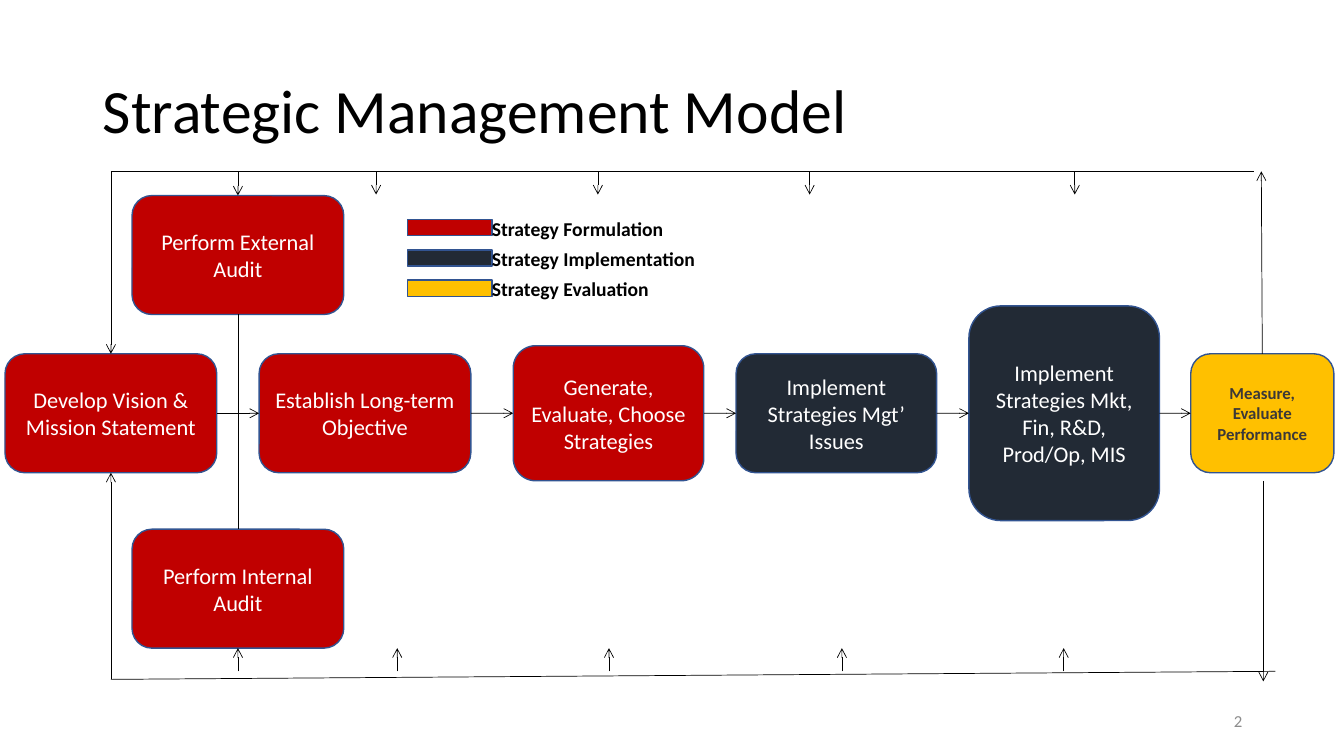
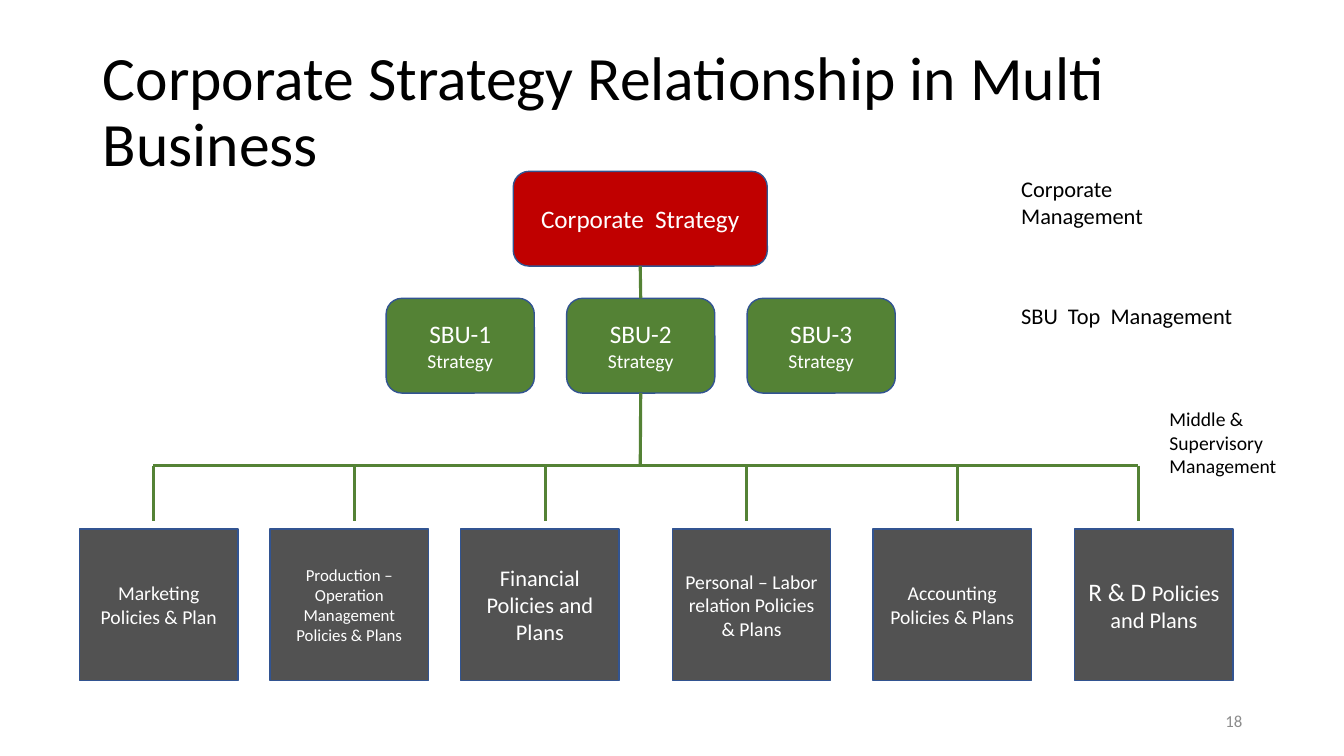
from lxml.etree import SubElement
from pptx import Presentation
from pptx.dml.color import RGBColor
from pptx.enum.shapes import MSO_CONNECTOR as CONN, MSO_SHAPE as SHAPE
from pptx.enum.text import MSO_ANCHOR as ANCHOR, MSO_AUTO_SIZE as FIT, PP_ALIGN as ALIGN
from pptx.oxml.ns import qn
from pptx.util import Inches, Pt

FONT = "Calibri"
BLACK, WHITE, GRAY = "000000", "FFFFFF", "8C8C8C"
RED, NAVY, GOLD, GREEN, SLATE = "C00000", "222A35", "FFC000", "548235", "525252"
OUTLINE, BROWN = "325491", "3B3838"
TOP, LEFT, BOTTOM, RIGHT = range(4)


def rgb(color):
    """Turn a hex string into a colour."""
    return RGBColor.from_string(color)


def write(shape, text, size=16, color=BLACK, bold=False, align=ALIGN.LEFT,
          anchor=ANCHOR.MIDDLE, wrap=True, fit=FIT.NONE, spacing=None):
    """Fill a shape with one paragraph, from a string or (text, size) runs."""
    tf = shape.text_frame
    tf.word_wrap, tf.auto_size, tf.vertical_anchor = wrap, fit, anchor
    p = tf.paragraphs[0]
    p.alignment = align
    if spacing:
        p.line_spacing = spacing
    for part, part_size in [(text, size)] if isinstance(text, str) else text:
        r = p.add_run()
        r.text = part
        r.font.name, r.font.size, r.font.bold = FONT, Pt(part_size), bold
        r.font.color.rgb = rgb(color)


def label(s, text, x, y, w, h, **fmt):
    """Place a text box."""
    write(s.shapes.add_textbox(Inches(x), Inches(y), Inches(w), Inches(h)), text, **fmt)


def box(s, kind, x, y, w, h, fill, text=None, color=WHITE, **fmt):
    """Place a filled, outlined shape with optional centred text."""
    sp = s.shapes.add_shape(kind, Inches(x), Inches(y), Inches(w), Inches(h))
    sp.shadow.inherit = False
    sp.fill.solid()
    sp.fill.fore_color.rgb = rgb(fill)
    sp.line.color.rgb = rgb(OUTLINE)
    sp.line.width = Pt(1)
    if text:
        write(sp, text, color=color, align=ALIGN.CENTER, **fmt)
    return sp


def line(s, start, end, color=BLACK, width=0.5, arrow=False):
    """Draw a straight line between ends given as (x, y) or (shape, side)."""
    joined = [not isinstance(tip[0], (int, float)) for tip in (start, end)]
    points = [(0, 0) if j else (Inches(tip[0]), Inches(tip[1]))
              for tip, j in zip((start, end), joined)]
    c = s.shapes.add_connector(CONN.STRAIGHT, *points[0], *points[1])
    if joined[0]:
        c.begin_connect(*start)
    if joined[1]:
        c.end_connect(*end)
    c.line.color.rgb = rgb(color)
    c.line.width = Pt(width)
    sp_pr = c._element.spPr
    if arrow:
        SubElement(sp_pr.find(qn("a:ln")), qn("a:tailEnd"), type="arrow")
    SubElement(sp_pr, qn("a:effectLst"))


def add_slide(prs, title, number):
    """Add a slide with the shared title style and page number."""
    s = prs.slides.add_slide(prs.slide_layouts[5])
    sp = s.shapes.title
    sp.left, sp.top, sp.width, sp.height = map(Inches, (0.92, 0.4, 11.5, 1.45))
    write(sp, title, size=44, spacing=0.9)
    label(s, number, 9.42, 6.95, 3, 0.4, size=12, color=GRAY, align=ALIGN.RIGHT)
    return s


def process(s, x, mid):
    """Draw the process boxes along a centre line, with the two audits."""
    steps = [
        ("Develop Vision & Mission Statement", 0, 2.1, 1.18, RED),
        ("Establish Long-term Objective", 2.52, 2.1, 1.18, RED),
        ("Generate, Evaluate, Choose Strategies", 5.04, 1.89, 1.34, RED),
        ("Implement Strategies Mgt’ Issues", 7.25, 1.99, 1.18, NAVY),
        ("Implement Strategies Mkt, Fin, R&D, Prod/Op, MIS", 9.56, 1.89, 2.13, NAVY),
    ]
    boxes = [box(s, SHAPE.ROUNDED_RECTANGLE, x + dx, mid - h / 2, w, h, fill, text)
             for text, dx, w, h, fill in steps]
    boxes.append(box(s, SHAPE.ROUNDED_RECTANGLE, x + 11.76, mid - 0.59, 1.42, 1.18, GOLD,
                     "Measure, Evaluate Performance", color=BROWN, size=12, bold=True))
    external, internal = [
        box(s, SHAPE.ROUNDED_RECTANGLE, x + 1.26, mid + dy, 2.1, 1.18, RED, text)
        for text, dy in (("Perform External Audit", -2.16), ("Perform Internal Audit", 1.15))]
    line(s, (external, BOTTOM), (internal, TOP))
    for before, after in zip(boxes, boxes[1:]):
        line(s, (before, RIGHT), (after, LEFT), arrow=True)
    return boxes[0], boxes[-1], external, internal


def feedback(s, x, y, w, h, vision, measure, external, internal):
    """Draw the feedback loop around the process."""
    right, bottom, tick = x + w, y + h, 0.23
    inner = bottom - 0.08
    line(s, (x, y), (right - 0.09, y))
    line(s, (x, bottom), (right + 0.12, inner))
    line(s, (x, y), (vision, TOP), arrow=True)
    line(s, (x, bottom), (vision, BOTTOM), arrow=True)
    line(s, (measure, TOP), (right - 0.02, y), arrow=True)
    line(s, (right, y + 3.07), (right, bottom + 0.02), arrow=True)
    line(s, (x + 1.26, y), (external, TOP), arrow=True)
    line(s, (x + 1.26, inner), (internal, BOTTOM), arrow=True)
    for dx in (2.63, 4.83, 6.93, 9.56):
        line(s, (x + dx, y), (x + dx, y + tick), arrow=True)
    for dx in (2.84, 4.94, 7.25, 9.45):
        line(s, (x + dx, inner), (x + dx, inner - tick), arrow=True)


def legend(s, x, y):
    """Draw the colour key of the strategy stages."""
    for i, (stage, fill) in enumerate((("Formulation", RED), ("Implementation", NAVY),
                                       ("Evaluation", GOLD))):
        top = y + 0.3 * i
        box(s, SHAPE.RECTANGLE, x, top, 0.84, 0.16, fill)
        label(s, f"Strategy {stage}", x + 0.74, top - 0.08, 2.23, 0.34, size=14, bold=True,
              anchor=ANCHOR.TOP, wrap=False, fit=FIT.SHAPE_TO_FIT_TEXT)


def upper_levels(s, x, y, bus_y):
    """Draw the corporate box and the business units, down to the bus line."""
    corporate = box(s, SHAPE.ROUNDED_RECTANGLE, x + 1.26, y, 2.52, 0.94, RED,
                    "Corporate  Strategy", size=18)
    units = [box(s, SHAPE.ROUNDED_RECTANGLE, x + 1.79 * i, y + 1.26, 1.47, 0.94, GREEN,
                 [(f"SBU-{i + 1} ", 18), ("Strategy", 14)]) for i in range(3)]
    line(s, (corporate, BOTTOM), (units[1], TOP), GREEN, 2.25)
    line(s, (units[1], BOTTOM), (x + 2.52, bus_y), GREEN, 2.25)


def departments(s, x, y):
    """Draw the bus line with its drops and the department boxes."""
    plans = [
        ([("Marketing Policies & Plan", 14)], 0, 0.73),
        ([("Production – Operation Management Policies & Plans", 12)], 1.89, 2.73),
        ([("Financial Policies and Plans", 16)], 3.78, 4.62),
        ([("Personal – Labor relation Policies & Plans", 14)], 5.88, 6.61),
        ([("Accounting Policies & Plans", 14)], 7.87, 8.71),
        ([("R & D ", 18), ("Policies and Plans", 16)], 9.87, 10.5),
    ]
    line(s, (x + plans[0][2], y), (x + plans[-1][2], y), GREEN, 2.25)
    for runs, dx, drop in plans:
        box(s, SHAPE.RECTANGLE, x + dx, y + 0.63, 1.57, 1.5, SLATE, runs)
        line(s, (x + drop, y), (x + drop, y + 0.55), GREEN, 2.25)


def level_names(s, x, y):
    """Name the management level beside each row."""
    for text, dx, dy, w, h, size in (
            ("Corporate  Management", 0, 0, 2.31, 0.64, 16),
            ("SBU  Top  Management", 0, 1.26, 2.52, 0.37, 16),
            ("Middle & Supervisory Management", 1.47, 2.3, 1.84, 0.81, 14)):
        label(s, text, x + dx, y + dy, w, h, size=size, anchor=ANCHOR.TOP,
              fit=FIT.SHAPE_TO_FIT_TEXT)


def model_slide(prs):
    """Build the strategic management model."""
    s = add_slide(prs, "Strategic Management Model", "2")
    feedback(s, 1.1, 1.7, 11.43, 5.04, *process(s, 0.05, 4.1))
    legend(s, 4.04, 2.18)


def hierarchy_slide(prs):
    """Build the multi-business strategy hierarchy."""
    s = add_slide(prs, "Corporate Strategy Relationship in Multi Business", "18")
    bus_y = 4.62
    upper_levels(s, 3.83, 1.7, bus_y)
    departments(s, 0.79, bus_y)
    level_names(s, 10.03, 1.69)


def main():
    """Build and save the presentation."""
    prs = Presentation()
    prs.slide_width, prs.slide_height = Inches(13.33), Inches(7.5)
    model_slide(prs)
    hierarchy_slide(prs)
    prs.save("out.pptx")


if __name__ == "__main__":
    main()
